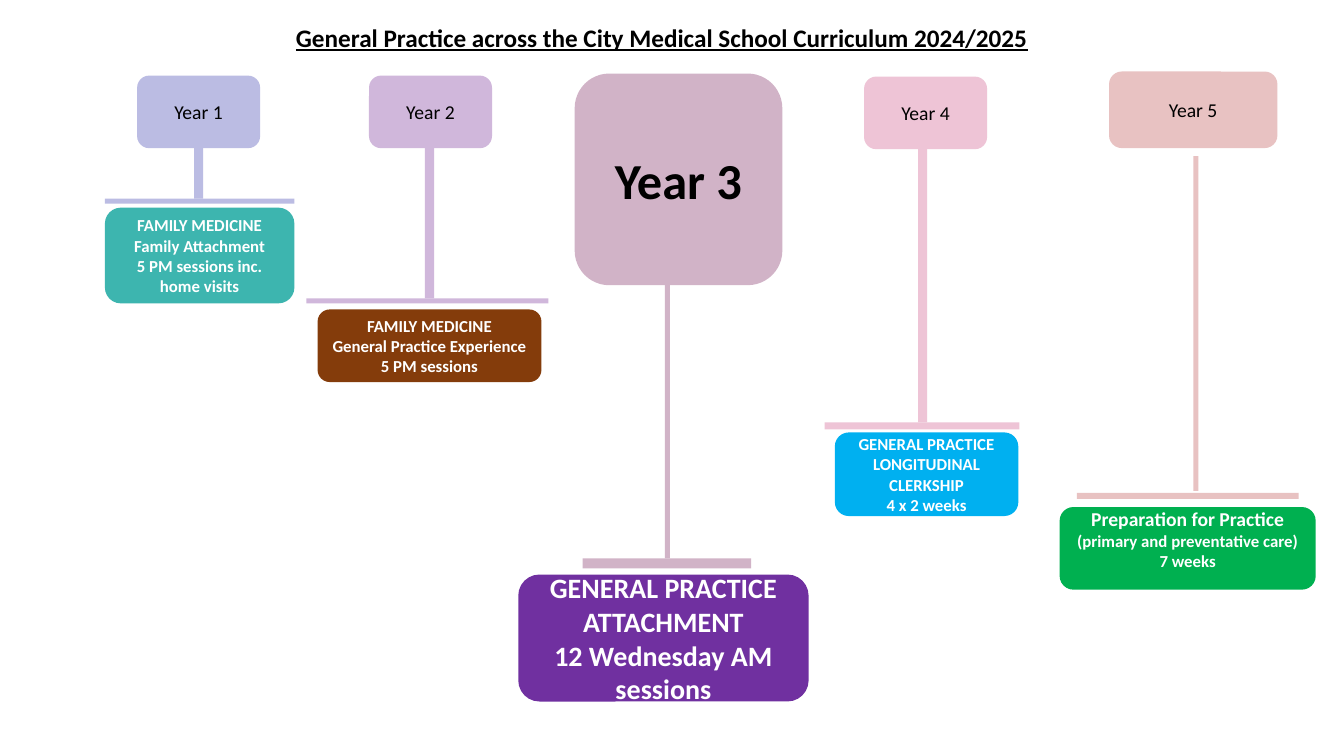
from pptx import Presentation
from pptx.dml.color import RGBColor
from pptx.enum.shapes import MSO_SHAPE
from pptx.enum.text import MSO_ANCHOR, PP_ALIGN
from pptx.util import Inches, Pt

ROUND, RECT = MSO_SHAPE.ROUNDED_RECTANGLE, MSO_SHAPE.RECTANGLE
MIDDLE, TOP, CENTER = MSO_ANCHOR.MIDDLE, MSO_ANCHOR.TOP, PP_ALIGN.CENTER
BLACK = RGBColor(0x00, 0x00, 0x00)
WHITE = RGBColor(0xFF, 0xFF, 0xFF)
LILAC = RGBColor(0xBB, 0xBC, 0xE3)
VIOLET = RGBColor(0xD0, 0xB7, 0xDB)
MAUVE = RGBColor(0xD1, 0xB3, 0xC7)
PINK = RGBColor(0xEE, 0xC4, 0xD6)
ROSE = RGBColor(0xE8, 0xC2, 0xC2)
TEAL = RGBColor(0x3D, 0xB5, 0xAF)
BROWN = RGBColor(0x84, 0x3C, 0x0B)
PURPLE = RGBColor(0x70, 0x30, 0xA0)
BLUE = RGBColor(0x00, 0xB0, 0xF0)
GREEN = RGBColor(0x00, 0xB0, 0x50)

TITLE = "General Practice across the Our Medical School Curriculum 2024/2025".replace("the Our", "the City")
YEARS = [
    dict(name="Year 1", tint=LILAC, head=(1.36, 0.75, 1.22, 0.72),
         stem=(1.97, 1.47, 0.09), bar=(1.04, 1.97, 1.88, 0.05),
         fill=TEAL, card=(1.04, 2.06, 1.88, 0.95),
         lines=[("FAMILY MEDICINE", 12), ("Family Attachment", 12),
                ("5 PM sessions inc. home visits", 12)]),
    dict(name="Year 2", tint=VIOLET, head=(3.66, 0.75, 1.22, 0.72),
         stem=(4.26, 1.4, 0.09), bar=(3.04, 2.96, 2.4, 0.05),
         fill=BROWN, card=(3.15, 3.07, 2.22, 0.72),
         lines=[("FAMILY MEDICINE", 12), ("General Practice Experience", 12),
                ("5 PM sessions", 12)]),
    dict(name="Year 3", tint=MAUVE, head=(5.7, 0.73, 2.06, 2.1),
         stem=(6.62, 2.66, 0.05), bar=(5.78, 5.54, 1.67, 0.1),
         fill=PURPLE, card=(5.14, 5.7, 2.88, 1.26), size=36, bold=True,
         lines=[("GENERAL PRACTICE", 20), ("ATTACHMENT", 20),
                ("12 Wednesday AM sessions", 20)]),
    dict(name="Year 4", tint=PINK, head=(8.57, 0.76, 1.22, 0.72),
         stem=(9.15, 1.38, 0.09), bar=(8.18, 4.19, 1.93, 0.07),
         fill=BLUE, card=(8.28, 4.29, 1.82, 0.83),
         lines=[("GENERAL PRACTICE", 12), ("LONGITUDINAL CLERKSHIP", 12),
                ("4 x 2 weeks", 12)]),
    dict(name="Year 5", tint=ROSE, head=(11, 0.71, 1.67, 0.76),
         stem=(11.86, 1.55, 0.05), bar=(10.68, 4.89, 2.2, 0.06),
         fill=GREEN, card=(10.51, 5.03, 2.54, 0.82), foot=0.23,
         lines=[("Preparation for Practice", 14),
                ("(primary and preventative care)", 12), ("7 weeks", 12)]),
]


def write(shape, lines, color=BLACK, bold=False, under=False,
          anchor=MIDDLE, foot=0.05):
    frame = shape.text_frame
    frame.word_wrap = True
    frame.vertical_anchor = anchor
    frame.margin_bottom = Inches(foot)
    for i, (text, size) in enumerate(lines):
        para = frame.add_paragraph() if i else frame.paragraphs[0]
        para.alignment = CENTER
        run = para.add_run()
        run.text = text
        font = run.font
        font.name, font.size = "Calibri", Pt(size)
        font.bold, font.underline = bold, under
        font.color.rgb = color


def block(slide, kind, box, fill):
    shape = slide.shapes.add_shape(kind, *map(Inches, box))
    shape.shadow.inherit = False
    shape.fill.solid()
    shape.fill.fore_color.rgb = fill
    shape.line.fill.background()
    return shape


def main():
    deck = Presentation()
    deck.slide_width, deck.slide_height = Inches(13.33), Inches(7.5)
    slide = deck.slides.add_slide(deck.slide_layouts[5])
    title = slide.shapes.title
    title.left, title.top = Inches(0.59), Inches(0.17)
    title.width, title.height = Inches(11.95), Inches(0.4)
    write(title, [(TITLE, 18)], bold=True, under=True, anchor=TOP)

    for year in YEARS:
        tint = year["tint"]
        mid, top, wide = year["stem"]
        end = year["bar"][1] - (0.02 if tint == ROSE else 0)
        block(slide, RECT, (mid - wide / 2, top, wide, end - top), tint)
        block(slide, RECT, year["bar"], tint)
        head = block(slide, ROUND, year["head"], tint)
        write(head, [(year["name"], year.get("size", 14))],
              bold=year.get("bold", False))
        card = block(slide, ROUND, year["card"], year["fill"])
        write(card, year["lines"], color=WHITE, bold=True,
              foot=year.get("foot", 0.05))

    deck.save("out.pptx")


if __name__ == "__main__":
    main()
